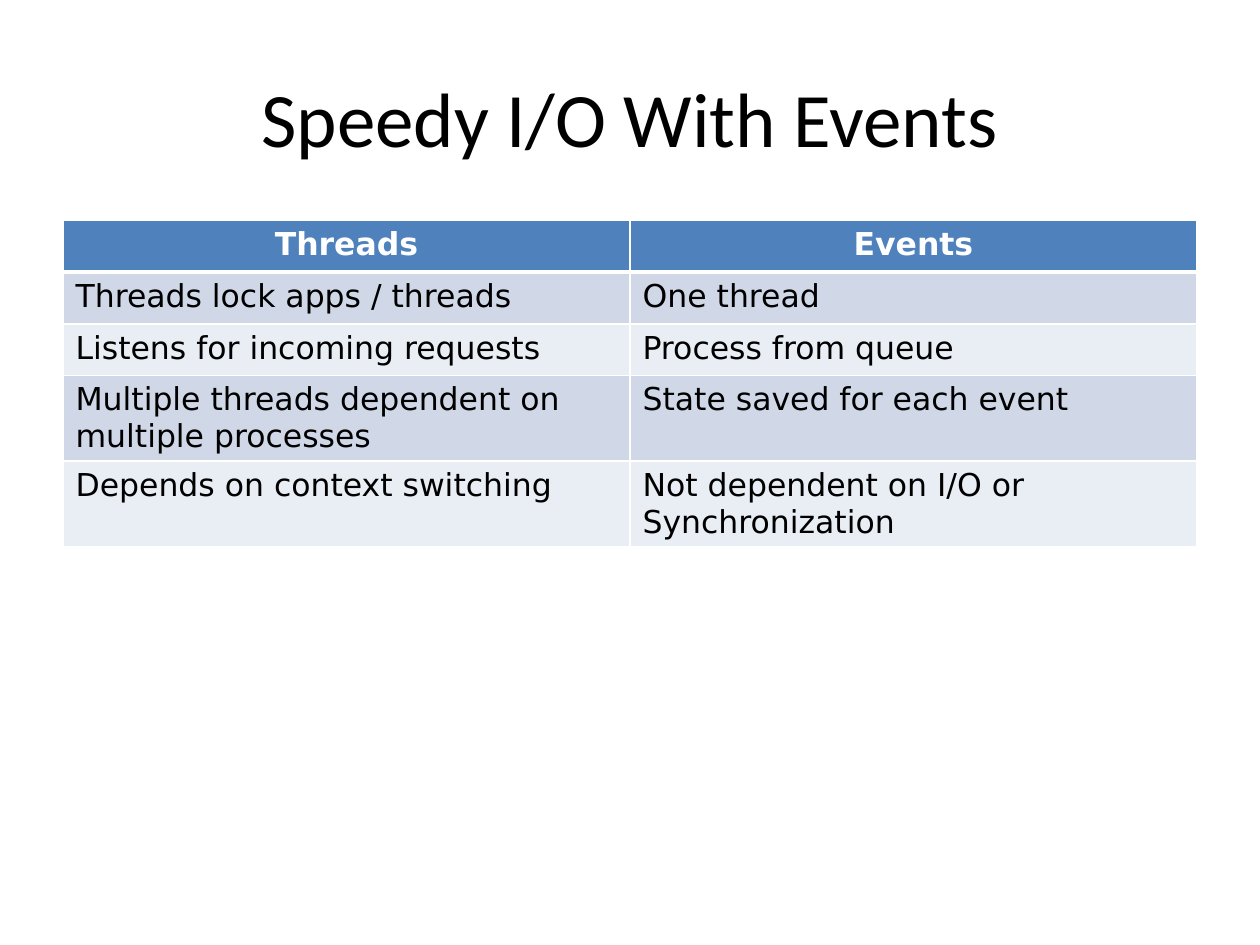
from dataclasses import dataclass

from lxml import etree
from pptx import Presentation
from pptx.dml.color import RGBColor
from pptx.enum import text
from pptx.oxml import ns
from pptx.util import Inches, Pt


@dataclass(frozen=True)
class Theme:
    title_font: str = "Calibri"
    table_font: str = "DejaVu Sans"
    title_size: int = 44
    table_size: int = 18
    ink: str = "000000"
    white: str = "FFFFFF"
    header: str = "4F81BD"
    bands: tuple = ("D0D8E8", "E9EDF4")


theme = Theme()


def add_run(paragraph, wording, font, size, color, bold=False):
    run = paragraph.add_run()
    run.text = wording
    run.font.name = font
    run.font.size = Pt(size)
    run.font.bold = bold
    run.font.color.rgb = RGBColor.from_string(color)


def set_borders(cell, bottom_width):
    properties = cell._tc.get_or_add_tcPr()
    widths = {"a:lnL": 1, "a:lnR": 1, "a:lnT": 1, "a:lnB": bottom_width}
    for position, (side, width) in enumerate(widths.items()):
        line = etree.Element(ns.qn(side), w=str(Pt(width)))
        fill = etree.SubElement(line, ns.qn("a:solidFill"))
        etree.SubElement(fill, ns.qn("a:srgbClr"), val=theme.white)
        properties.insert(position, line)


presentation = Presentation()
presentation.slide_width = Inches(10)
presentation.slide_height = Inches(7.5)
slide = presentation.slides.add_slide(presentation.slide_layouts[5])

title = slide.shapes.title
title.left, title.top = Inches(0.5), Inches(0.3)
title.width, title.height = Inches(9), Inches(1.25)
title.text_frame.vertical_anchor = text.MSO_ANCHOR.MIDDLE
title_paragraph = title.text_frame.paragraphs[0]
title_paragraph.alignment = text.PP_ALIGN.CENTER
add_run(title_paragraph, "Speedy I/O With Events", theme.title_font, theme.title_size, theme.ink)

comparison = [
    ("Threads", "Events"),
    ("Threads lock apps / threads", "One thread"),
    ("Listens for incoming requests", "Process from queue"),
    ("Multiple threads dependent on multiple processes", "State saved for each event"),
    ("Depends on context switching", "Not dependent on I/O or Synchronization"),
]
row_height = Inches(0.41)
table = slide.shapes.add_table(
    len(comparison), 2, Inches(0.5), Inches(1.75), Inches(9), row_height * len(comparison)
).table

for row_index, entries in enumerate(comparison):
    is_header = row_index == 0
    table.rows[row_index].height = row_height
    for column_index, wording in enumerate(entries):
        cell = table.cell(row_index, column_index)
        cell.fill.solid()
        fill_color = theme.header if is_header else theme.bands[(row_index - 1) % 2]
        cell.fill.fore_color.rgb = RGBColor.from_string(fill_color)
        set_borders(cell, 3 if is_header else 1)
        paragraph = cell.text_frame.paragraphs[0]
        paragraph.alignment = text.PP_ALIGN.CENTER if is_header else text.PP_ALIGN.LEFT
        text_color = theme.white if is_header else theme.ink
        add_run(paragraph, wording, theme.table_font, theme.table_size, text_color, is_header)

presentation.save("out.pptx")
